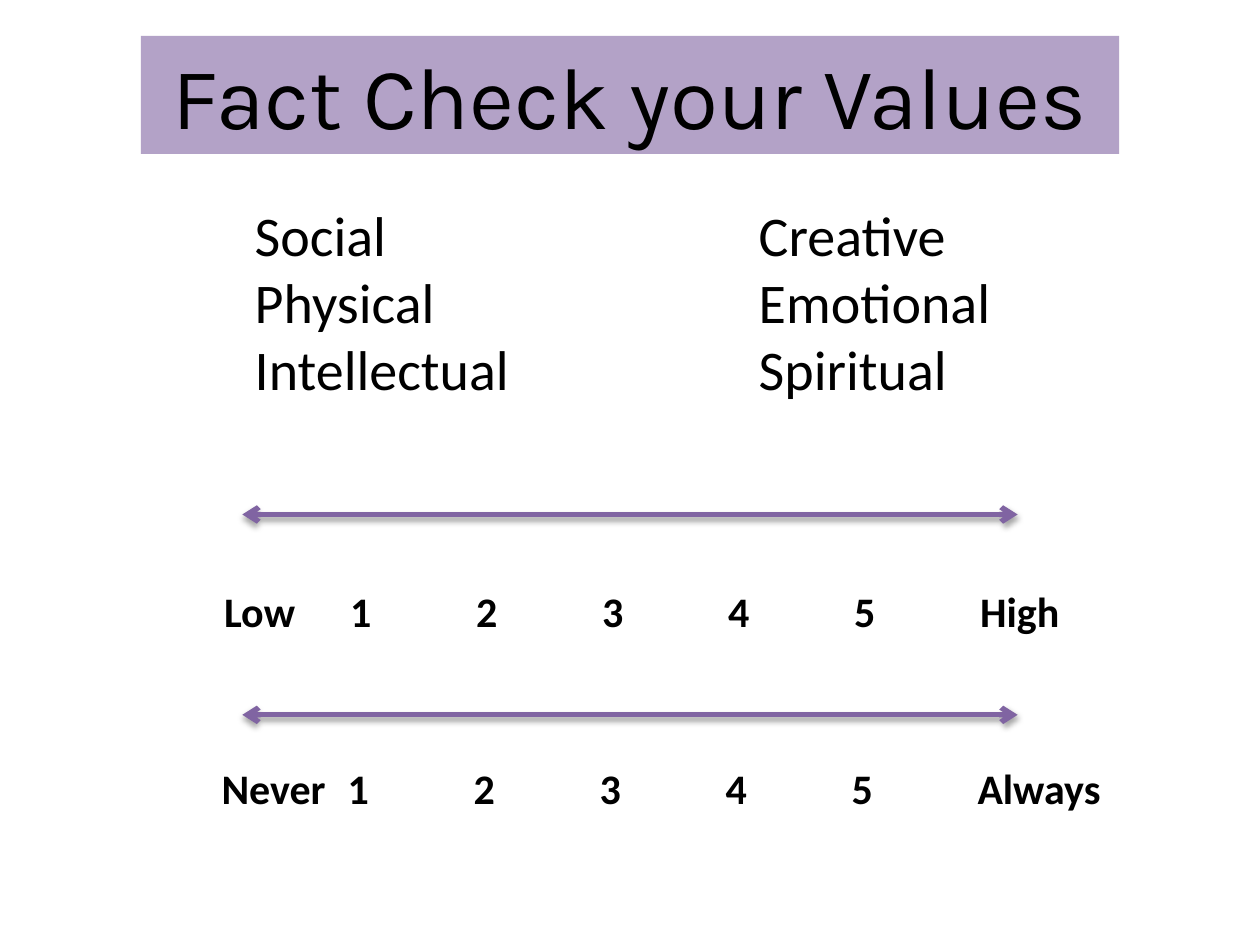
"""Build the "Fact Check your Values" slide with two rating scales."""
import pptx
import pptx.dml.color
import pptx.enum.shapes
import pptx.enum.text
import pptx.oxml
import pptx.util

Pt = pptx.util.Pt
RGBColor = pptx.dml.color.RGBColor

BLACK = RGBColor(0x00, 0x00, 0x00)
LILAC = RGBColor(0xB3, 0xA2, 0xC7)
PURPLE = RGBColor(0x80, 0x64, 0xA2)
NS = 'xmlns:a="http://schemas.openxmlformats.org/drawingml/2006/main"'

TITLE = "Fact Check your Values"
VALUES = [
    ("Social", "Creative"),
    ("Physical", "Emotional"),
    ("Intellectual", "Spiritual"),
]
SCALES = [
    {"ends": ("Low", "High"), "arrow_y": 294, "left": 121, "top": 331},
    {"ends": ("Never", "Always"), "arrow_y": 408.5, "left": 119.5, "top": 432},
]
RATINGS = ("1", "2", "3", "4", "5")
ARROW_LEFT, ARROW_RIGHT = 138.5, 581.5
RATING_STEP = 72
VALUE_STEP = 288


def write(sp, rows, size, font="Calibri", bold=False, tab_step=None):
    tf = sp.text_frame
    tf.word_wrap = True
    tf.auto_size = pptx.enum.text.MSO_AUTO_SIZE.SHAPE_TO_FIT_TEXT
    tf.text = "\n".join("\t".join(row) for row in rows)
    for p, row in zip(tf.paragraphs, rows):
        if tab_step:
            stops = "".join(
                f'<a:tab pos="{Pt(tab_step * i)}" algn="l"/>'
                for i in range(1, len(row))
            )
            p._p.get_or_add_pPr().append(
                pptx.oxml.parse_xml(f"<a:tabLst {NS}>{stops}</a:tabLst>")
            )
        for r in p.runs:
            r.font.name = font
            r.font.size = Pt(size)
            r.font.bold = bold
            r.font.color.rgb = BLACK


def add_text(s, box, rows, size, **style):
    sp = s.shapes.add_textbox(*map(Pt, box))
    write(sp, rows, size, **style)


def add_title(s):
    sp = s.shapes.add_shape(
        pptx.enum.shapes.MSO_SHAPE.RECTANGLE, *map(Pt, (80.5, 20.5, 559, 67.5))
    )
    sp.shadow.inherit = False
    sp.fill.solid()
    sp.fill.fore_color.rgb = LILAC
    sp.line.fill.background()
    write(sp, [(TITLE,)], 50, font="Karla")
    sp.text_frame.paragraphs[0].alignment = pptx.enum.text.PP_ALIGN.CENTER


def add_arrow(s, y):
    line = s.shapes.add_connector(
        pptx.enum.shapes.MSO_CONNECTOR.STRAIGHT,
        *map(Pt, (ARROW_LEFT, y, ARROW_RIGHT, y)),
    )
    line.line.color.rgb = PURPLE
    line.line.width = Pt(3)
    ln = line.line._get_or_add_ln()
    for end in ("headEnd", "tailEnd"):
        ln.append(pptx.oxml.parse_xml(f'<a:{end} {NS} type="arrow"/>'))
    line._element.spPr.append(pptx.oxml.parse_xml(
        f'<a:effectLst {NS}><a:outerShdw blurRad="{Pt(3.1)}" dist="{Pt(1.8)}" '
        'dir="5400000" rotWithShape="0"><a:srgbClr val="000000">'
        '<a:alpha val="35000"/></a:srgbClr></a:outerShdw></a:effectLst>'
    ))


def main():
    prs = pptx.Presentation()
    prs.slide_width, prs.slide_height = Pt(720), Pt(540)
    s = prs.slides.add_slide(prs.slide_layouts[6])
    add_title(s)
    for scale in SCALES:
        low, high = scale["ends"]
        add_arrow(s, scale["arrow_y"])
        add_text(s, (scale["left"], scale["top"], 522, 36),
                 [(low, *RATINGS, high)], 24, bold=True, tab_step=RATING_STEP)
    add_text(s, (138.5, 111, 465, 124), VALUES, 32, tab_step=VALUE_STEP)
    prs.save("out.pptx")


if __name__ == "__main__":
    main()
